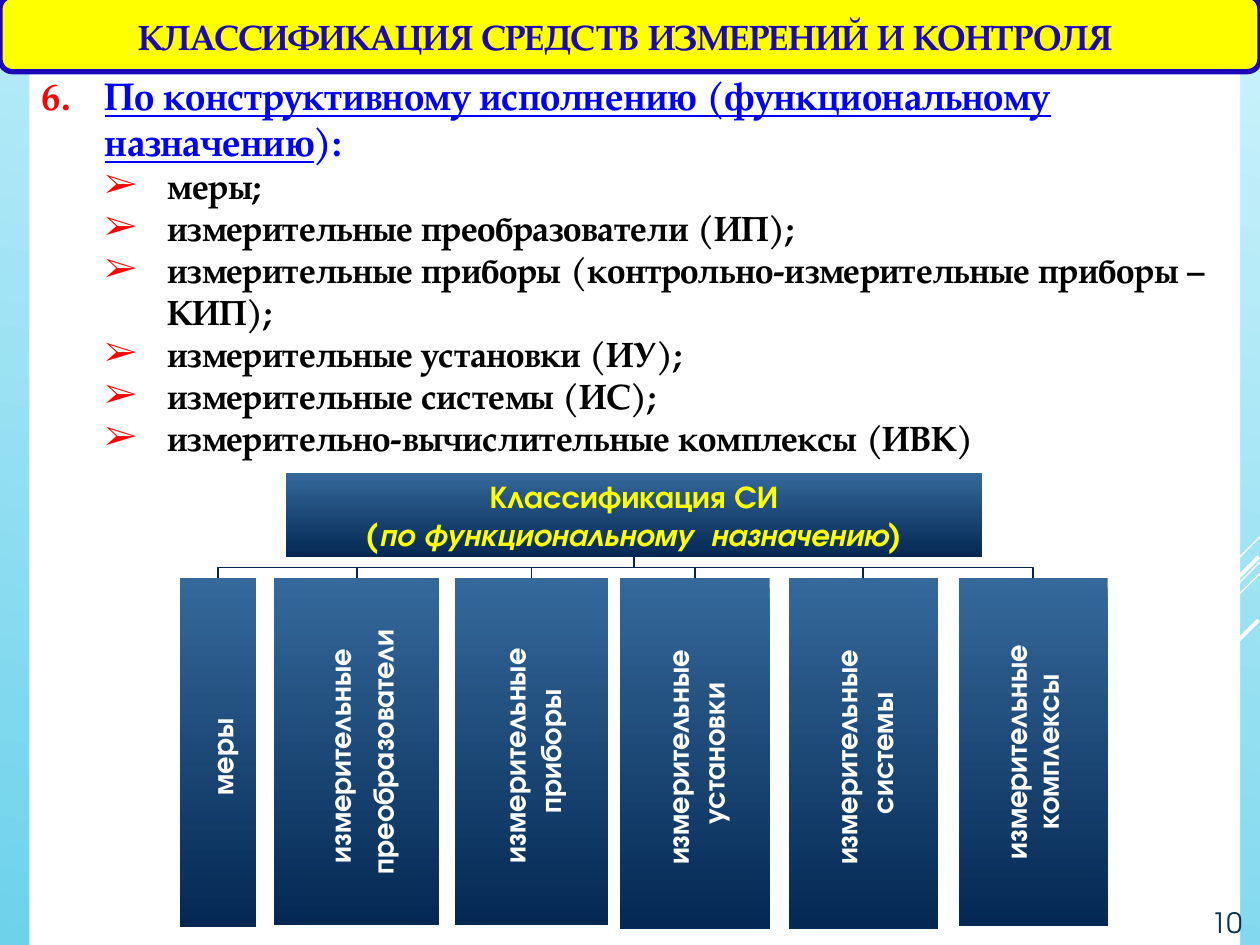
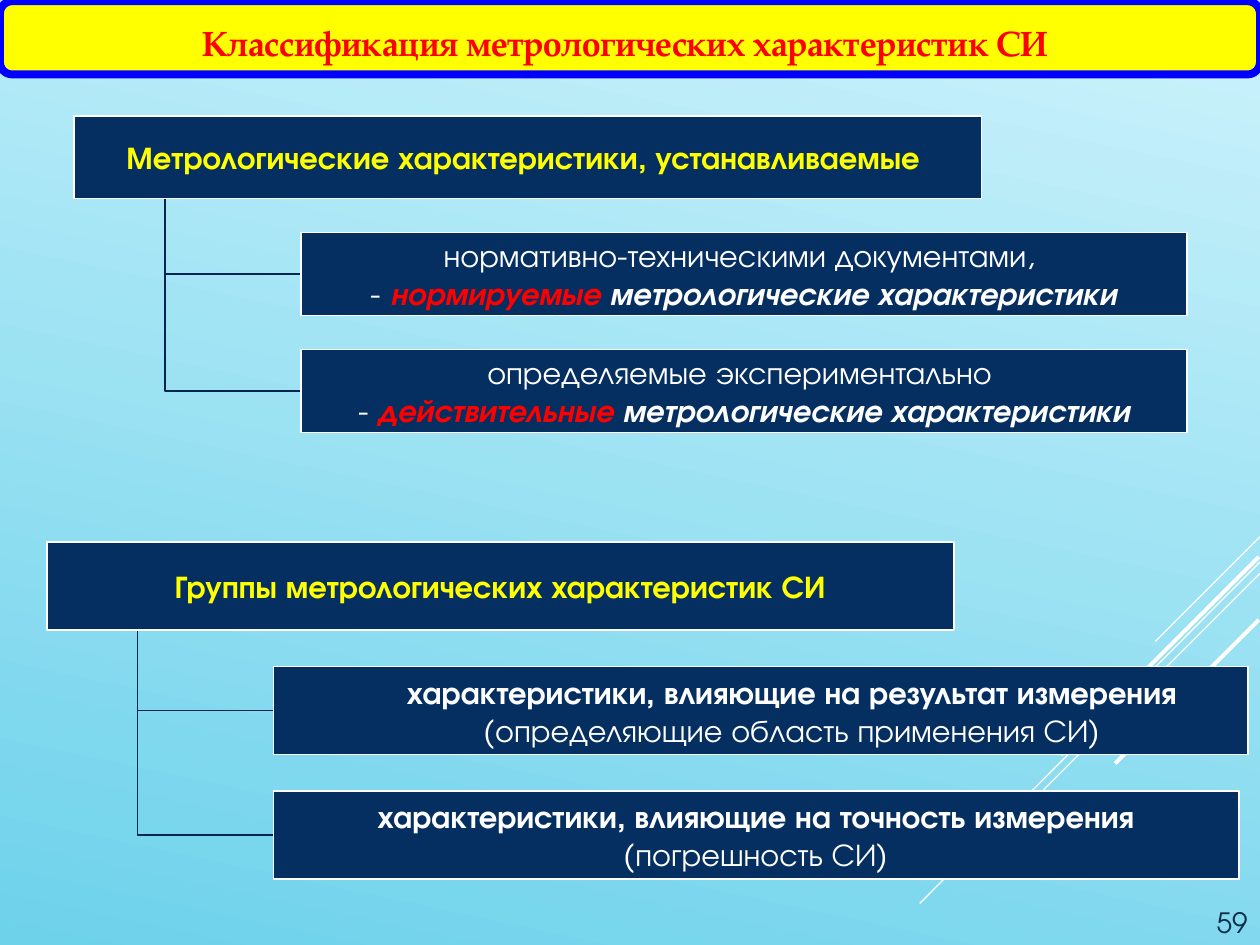
"""Build two slides on the classification of measuring instruments."""
from lxml.etree import SubElement
from pptx import Presentation
from pptx.dml.color import RGBColor
from pptx.enum.shapes import MSO_CONNECTOR, MSO_SHAPE
from pptx.enum.text import MSO_ANCHOR, PP_ALIGN
from pptx.oxml.ns import qn
from pptx.util import Pt

WHITE = RGBColor(0xFF, 0xFF, 0xFF)
BLACK = RGBColor(0, 0, 0)
YELLOW = RGBColor(0xFF, 0xFF, 0)
RED = RGBColor(0xFF, 0, 0)
BLUE = RGBColor(0, 0, 0xFF)
INDIGO = RGBColor(0x1D, 0x08, 0xB8)
NAVY = RGBColor(0x05, 0x2F, 0x61)
NAVY_LIGHT = RGBColor(0x35, 0x69, 0x9B)
NAVY_DARK = RGBColor(0x04, 0x28, 0x53)
STEM = RGBColor(0x04, 0x26, 0x4E)
NUMBER = RGBColor(0x0A, 0x30, 0x4A)
SKY_LIGHT = RGBColor(0xC8, 0xF1, 0xFB)
SKY_DARK = RGBColor(0x6E, 0xD2, 0xEB)

SANS = "TeX Gyre Adventor"
SERIF = "TeX Gyre Pagella"
BULLET_FONT = "Times New Roman"
TITLE = {"name": SERIF, "size": Pt(20), "bold": True}
HEADING = {"name": SERIF, "size": Pt(22), "bold": True, "color": BLUE}
ITEM = {"name": SERIF, "size": Pt(20), "bold": True, "color": BLACK}
ROOT = {"name": SANS, "size": Pt(18), "bold": True, "color": YELLOW}
CHILD = {"name": SANS, "size": Pt(18), "color": WHITE}
COLUMN = {"name": SANS, "size": Pt(17), "bold": True, "color": WHITE}
PAGE = {"name": SANS, "size": Pt(16), "color": NUMBER}
BOLD = {"bold": True}
STRONG = {"bold": True, "italic": True}
KEYWORD = {**STRONG, "color": RED}


def add_box(s, at, lines, base, fill=None, line=None, width=1, inset=0.72,
            align=PP_ALIGN.CENTER, preset=MSO_SHAPE.RECTANGLE):
    """Add a shape whose lines are lists of (text, format) runs."""
    sp = s.shapes.add_shape(preset, *[Pt(v) for v in at])
    sp.shadow.inherit = False
    if fill is None:
        sp.fill.gradient()
        sp.fill.gradient_angle = 270
        for stop, color, place in zip(sp.fill.gradient_stops, (NAVY_LIGHT, NAVY_DARK), (0, 1)):
            stop.color.rgb = color
            stop.position = place
    else:
        sp.fill.solid()
        sp.fill.fore_color.rgb = fill
    if line is None:
        sp.line.fill.background()
    else:
        sp.line.color.rgb = line
        sp.line.width = Pt(width)
    tf = sp.text_frame
    tf.word_wrap = True
    tf.vertical_anchor = MSO_ANCHOR.MIDDLE
    for side in ("left", "top", "right", "bottom"):
        setattr(tf, f"margin_{side}", Pt(inset))
    write(tf, lines, base, align)
    return sp


def write(tf, lines, base, align):
    """Fill a text frame with one paragraph per line."""
    for i, runs in enumerate(lines):
        p = tf.add_paragraph() if i else tf.paragraphs[0]
        p.alignment = align
        for text, extra in runs:
            r = p.add_run()
            r.text = text
            for key, value in {**base, **extra}.items():
                if key == "color":
                    r.font.color.rgb = value
                else:
                    setattr(r.font, key, value)


prs = Presentation()
prs.slide_width, prs.slide_height = Pt(720), Pt(540)

RAYS = [
    (720, 306.7, 660.2, 366.5, 0.75),
    (720, 321.1, 525.6, 516.2, 0.75),
    (720, 327.6, 596.2, 451.4, 0.75),
    (719.3, 318.2, 606.2, 431.3, 2.25),
    (719.3, 354.2, 637.2, 436.3, 2.25),
]
for _ in range(2):
    s = prs.slides.add_slide(prs.slide_layouts[6])
    fill = s.background.fill
    fill.gradient()
    fill.gradient_angle = 258
    for stop, color, place in zip(fill.gradient_stops, (SKY_LIGHT, SKY_DARK), (0.04, 1)):
        stop.color.rgb = color
        stop.position = place
    for *ends, width in RAYS:
        ray = s.shapes.add_connector(MSO_CONNECTOR.STRAIGHT, *[Pt(v) for v in ends])
        ray.line.color.rgb = WHITE
        ray.line.width = Pt(width)
        SubElement(ray._element.spPr, qn("a:effectLst"))
instruments, characteristics = prs.slides

items = [
    "меры;",
    "измерительные преобразователи (ИП);",
    "измерительные приборы (контрольно-измерительные приборы – КИП);",
    "измерительные установки (ИУ);",
    "измерительные системы (ИС);",
    "измерительно-вычислительные комплексы (ИВК)",
]
lines = [[("По конструктивному исполнению (функциональному назначению",
           {**HEADING, "underline": True}), ("):", HEADING)]]
lines += [[(item, {})] for item in items]
sp = add_box(instruments, (16.8, 37.4, 691.9, 502.6), lines, ITEM, WHITE, align=PP_ALIGN.LEFT)
tf = sp.text_frame
tf.vertical_anchor = MSO_ANCHOR.TOP
tf.margin_left = tf.margin_right = Pt(7.2)
tf.margin_top = Pt(3.6)
for i, p in enumerate(tf.paragraphs):
    p.level = min(i, 1)
    pPr = p._p.get_or_add_pPr()
    pPr.set("marL", str(Pt(36 * (p.level + 1))))
    pPr.set("indent", str(Pt(-36)))
    SubElement(SubElement(pPr, qn("a:buClr")), qn("a:srgbClr"), val=str(RED))
    if i:
        SubElement(pPr, qn("a:buFont"), typeface=BULLET_FONT)
        SubElement(pPr, qn("a:buChar"), char="➢")
    else:
        SubElement(pPr, qn("a:buAutoNum"), type="arabicPeriod", startAt="6")

columns = [
    (103, 43.2, 199.4, 1.2, ["меры "]),
    (156.7, 94.3, 198.4, 1.2, ["измерительные ", "преобразователи"]),
    (260, 87.4, 198, 1, ["измерительные ", "приборы"]),
    (354.2, 85.7, 200.2, 1, ["измерительные ", "установки"]),
    (450.7, 85.2, 200.2, 1, ["измерительные ", "системы"]),
    (547.9, 85, 198.7, 0.9, ["измерительные", "комплексы"]),
]
root_x, root_bottom, column_top = 362.4, 318.2, 330.4
bus_y = (root_bottom + column_top) / 2
elbows = []
for left, width, *_ in columns:
    x = left + width / 2
    elbows.append((instruments, [(root_x, root_bottom), (root_x, bus_y), (x, bus_y), (x, column_top)]))

trees = [
    (42.5, 66.1, 47.4, "Метрологические характеристики, устанавливаемые ", [
        (506.2, 0, [[("нормативно-техническими документами, ", {})],
                    [("- ", {}), ("нормируемые", KEYWORD),
                     (" метрологические характеристики", STRONG)]]),
        (506.2, 0, [[("определяемые экспериментально ", {})],
                    [("- ", {}), ("действительные ", KEYWORD),
                     ("метрологические характеристики", STRONG)]]),
    ]),
    (26.8, 309.8, 50.4, "Группы метрологических характеристик СИ", [
        (556.6, 36, [[("характеристики, влияющие на результат измерения", BOLD)],
                     [("(определяющие область применения СИ)", {})]]),
        (551.5, 0, [[("характеристики, влияющие на точность измерения", BOLD)],
                    [("(погрешность СИ)", {})]]),
    ]),
]
root_width, stem_dx, child_dx, pitch = 518.4, 51.8, 129.6, 1.41
for left, top, height, _, children in trees:
    x = left + stem_dx
    for i in range(len(children), 0, -1):
        y = top + i * pitch * height + height / 2
        elbows.append((characteristics, [(x, top + height), (x, y), (left + child_dx, y)]))

for s, points in elbows:
    points = [(Pt(x), Pt(y)) for x, y in points]
    outline = s.shapes.build_freeform(*points[0], scale=1.0)
    outline.add_line_segments(points[1:], close=False)
    sp = outline.convert_to_shape()
    sp.shadow.inherit = False
    sp.fill.background()
    sp.line.color.rgb = STEM
    sp.line.width = Pt(1)

add_box(instruments, (163.5, 270.2, 397.6, 48), [
    [("Классификация СИ", {})],
    [("(", {}), ("по функциональному  назначению", {"italic": True}), (")", {})],
], ROOT)
for left, width, height, spacing, words in columns:
    sp = add_box(instruments, (left, column_top, width, height), [[(w, {})] for w in words], COLUMN)
    sp.text_frame._txBody.bodyPr.set("vert", "vert270")
    for p in sp.text_frame.paragraphs:
        p.line_spacing = spacing

for left, top, height, heading, children in trees:
    add_box(characteristics, (left, top, root_width, height), [[(heading, {})]], ROOT, NAVY, WHITE)
    for i, (width, indent, lines) in enumerate(children, 1):
        at = (left + child_dx, top + i * pitch * height, width, height)
        sp = add_box(characteristics, at, lines, CHILD, NAVY, WHITE)
        for p in sp.text_frame.paragraphs:
            p._p.get_or_add_pPr().set("marL", str(Pt(indent)))

headers = [
    (instruments, "КЛАССИФИКАЦИЯ СРЕДСТВ ИЗМЕРЕНИЙ И КОНТРОЛЯ", INDIGO, INDIGO, 3, -2.2, 43.2, 7, "10", 649.2),
    (characteristics, "Классификация метрологических характеристик СИ", RED, BLUE, 4.5, 0.7, 41.8, 9, "59", 652.3),
]
for s, title, color, border, weight, top, height, drop, number, left in headers:
    sp = add_box(s, (0, top, 720, height), [[(title, {"color": color})]], TITLE, YELLOW,
                 border, weight, 3.6, preset=MSO_SHAPE.ROUNDED_RECTANGLE)
    sp.text_frame.margin_top = Pt(drop)
    sp.text_frame.margin_right = Pt(9)
    tf = s.shapes.add_textbox(Pt(left), Pt(487.4), Pt(67.7), Pt(52.6)).text_frame
    tf.word_wrap = True
    tf.vertical_anchor = MSO_ANCHOR.BOTTOM
    write(tf, [[(number, {})]], PAGE, PP_ALIGN.RIGHT)

prs.save("out.pptx")
